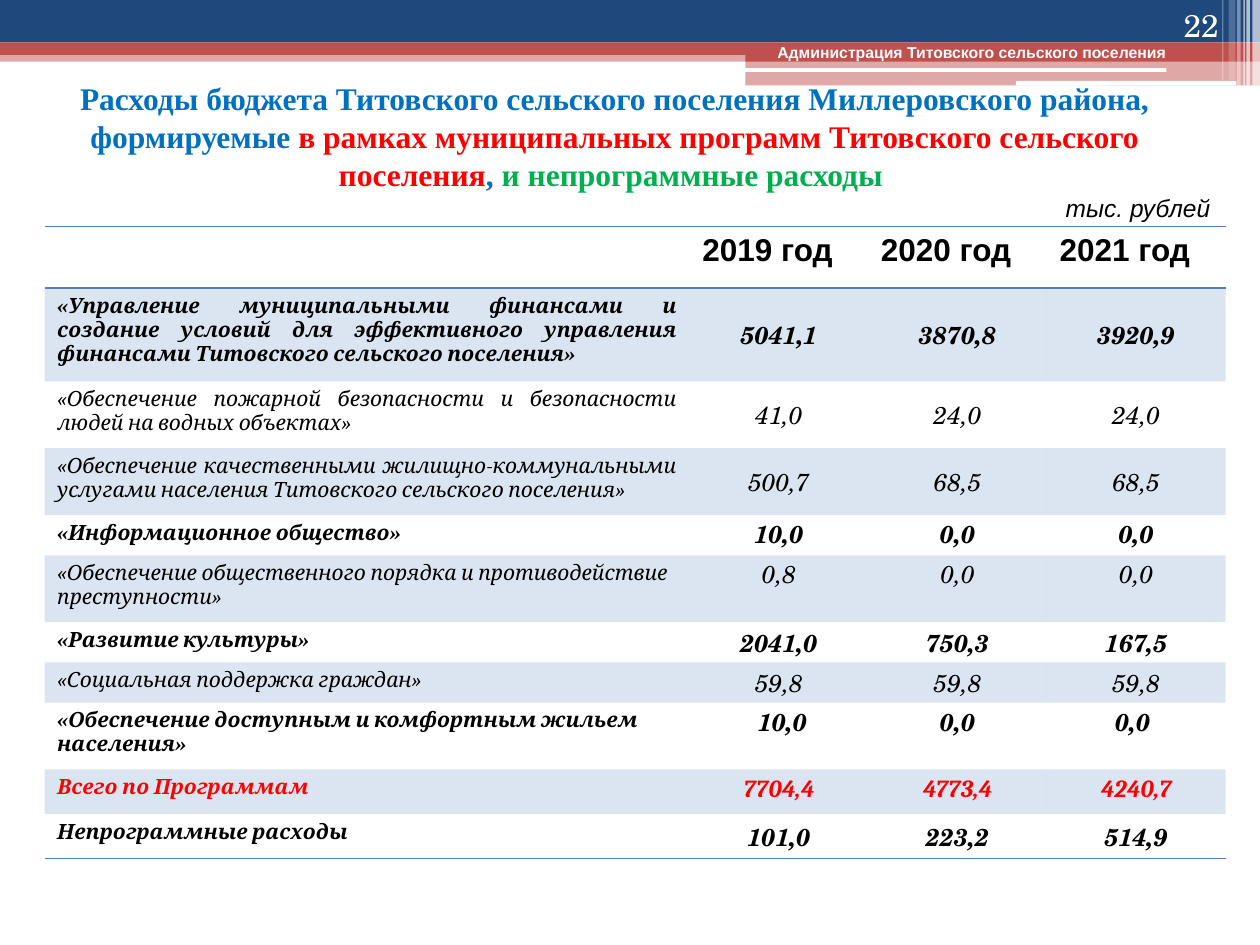
from lxml.etree import SubElement
from pptx import Presentation
from pptx.dml.color import RGBColor
from pptx.enum.shapes import MSO_SHAPE
from pptx.enum.text import MSO_ANCHOR, PP_ALIGN
from pptx.oxml import parse_xml
from pptx.oxml.ns import nsdecls, qn
from pptx.util import Pt

NAVY = RGBColor(0x1F, 0x49, 0x7D)
BRICK = RGBColor(0xC0, 0x50, 0x4D)
STEEL = RGBColor(0x4F, 0x81, 0xBD)
WHITE = RGBColor(0xFF, 0xFF, 0xFF)
BLACK = RGBColor(0, 0, 0)
BLUE = RGBColor(0x00, 0x70, 0xC0)
RED = RGBColor(0xFF, 0, 0)
GREEN = RGBColor(0x00, 0xB0, 0x50)
NO_STYLE = "{2D5ABB26-0587-4C30-8999-92F81FD0307C}"

# left, top, width, height, colour, opacity in percent
BANDS = [
    (0, 28.8, 720, 6.5, BRICK, 50),
    (0, 0, 720, 24.2, NAVY, 100),
    (0, 24.2, 720, 7.2, BRICK, 100),
    (426, 28, 294, 7.2, BRICK, 100),
    (426, 35.2, 294, 13.6, BRICK, 50),
]
PILLS = [(425.5, 38.9, 241, 2.2, WHITE, 100), (580.5, 46.3, 126, 2.6, WHITE, 100)]
# left, width, height, opacity of the stripes at the right edge
STRIPES = [
    (715.6, 4.4, 49, 65), (712.2, 2, 49, 65), (710.6, 0.8, 49, 60),
    (707, 2, 49, 40), (702, 4, 46, 20), (698.4, 0.8, 46, 30),
]
TITLE = [
    ("Расходы бюджета Титовского сельского поселения Миллеровского района, "
     "формируемые ", BLUE),
    ("в рамках муниципальных программ Титовского сельского поселения", RED),
    (", ", BLUE),
    ("и непрограммные расходы ", GREEN),
]
COLUMN_WIDTHS = [368.6, 102.1, 102.1, 102.1]
HEADER_HEIGHT = 35
YEARS = ["2019 год", "2020 год", "2021 год"]

TOP, MIDDLE = MSO_ANCHOR.TOP, MSO_ANCHOR.MIDDLE
LEFT, JUSTIFY = PP_ALIGN.LEFT, PP_ALIGN.JUSTIFY
PLAIN = dict(bold=False, color=BLACK, values_font="TeX Gyre Schola", margin=5)
BOLD = {**PLAIN, "bold": True}
TOTAL = dict(bold=True, color=RED, values_font="Cambria", margin=None)
# programme, values by year, height, name alignment, value anchor, look
EXPENSES = [
    ("«Управление муниципальными финансами и создание условий для эффективного "
     "управления финансами Титовского сельского поселения»",
     ["5041,1", "3870,8", "3920,9"], 53.5, JUSTIFY, MIDDLE, BOLD),
    ("«Обеспечение пожарной безопасности и безопасности людей на водных объектах»",
     ["41,0", "24,0", "24,0"], 38.2, JUSTIFY, MIDDLE, PLAIN),
    ("«Обеспечение качественными жилищно-коммунальными услугами населения "
     "Титовского сельского поселения»",
     ["500,7", "68,5", "68,5"], 38.2, JUSTIFY, MIDDLE, PLAIN),
    ("«Информационное общество»", ["10,0", "0,0", "0,0"], 23, LEFT, TOP, BOLD),
    ("«Обеспечение общественного порядка и противодействие преступности»",
     ["0,8", "0,0", "0,0"], 38.2, LEFT, TOP, PLAIN),
    ("«Развитие культуры»", ["2041,0", "750,3", "167,5"], 23, LEFT, MIDDLE, BOLD),
    ("«Социальная поддержка граждан»",
     ["59,8", "59,8", "59,8"], 23, LEFT, MIDDLE, PLAIN),
    ("«Обеспечение доступным и комфортным жильем населения»",
     [" 10,0", "0,0", "0,0 "], 38.2, LEFT, TOP, BOLD),
    ("Всего по Программам",
     ["7704,4", "4773,4", "4240,7"], 25.5, LEFT, TOP, TOTAL),
    ("Непрограммные расходы",
     ["101,0", "223,2", "514,9"], 25.5, LEFT, MIDDLE, BOLD),
]


def set_fill(fill, color, opacity=100):
    fill.solid()
    fill.fore_color.rgb = color
    if opacity < 100:
        srgb = fill._xPr.find(f"{qn('a:solidFill')}/{qn('a:srgbClr')}")
        SubElement(srgb, qn("a:alpha"), val=str(opacity * 1000))


def add_band(slide, left, top, width, height, color, opacity,
             preset=MSO_SHAPE.RECTANGLE):
    band = slide.shapes.add_shape(preset, Pt(left), Pt(top), Pt(width), Pt(height))
    band.shadow.inherit = False
    band.line.fill.background()
    set_fill(band.fill, color, opacity)


def write(paragraph, text, color, **font_format):
    run = paragraph.add_run()
    run.text = text
    run.font.color.rgb = color
    for name, value in font_format.items():
        setattr(run.font, name, value)


def add_text(slide, left, top, width, height, runs, align=LEFT, anchor=TOP,
             **font_format):
    box = slide.shapes.add_textbox(Pt(left), Pt(top), Pt(width), Pt(height))
    frame = box.text_frame
    frame.word_wrap = True
    frame.vertical_anchor = anchor
    paragraph = frame.paragraphs[0]
    paragraph.alignment = align
    for text, color in runs:
        write(paragraph, text, color, **font_format)


def add_borders(cell, *sides):
    properties = cell._tc.get_or_add_tcPr()
    for position, side in enumerate(sides):
        properties.insert(position, parse_xml(
            f'<a:{side} {nsdecls("a")} w="{Pt(1)}"><a:solidFill>'
            f'<a:srgbClr val="{STEEL}"/></a:solidFill></a:{side}>'))


def fill_expense_row(cells, expense, shaded):
    programme, values, _, align, anchor, look = expense
    for column, (cell, text) in enumerate(zip(cells, [programme, *values])):
        if shaded:
            set_fill(cell.fill, STEEL, 20)
        else:
            cell.fill.background()
        paragraph = cell.text_frame.paragraphs[0]
        paragraph.alignment = PP_ALIGN.CENTER if column else align
        if column:
            cell.vertical_anchor = anchor
            if look["margin"] is not None:
                side = Pt(look["margin"])
                margins = dict(margin_left=side, margin_right=side,
                               margin_top=0, margin_bottom=0)
                for name, value in margins.items():
                    setattr(cell, name, value)
        write(paragraph, text, look["color"], size=Pt(14 if column else 12),
              name=look["values_font"] if column else "Cambria",
              bold=look["bold"], italic=True)


def add_expense_table(slide):
    heights = [HEADER_HEIGHT] + [expense[2] for expense in EXPENSES]
    table = slide.shapes.add_table(
        len(heights), len(COLUMN_WIDTHS), Pt(25.5), Pt(129.5),
        Pt(sum(COLUMN_WIDTHS)), Pt(sum(heights))).table
    table._tbl.tblPr.find(qn("a:tableStyleId")).text = NO_STYLE
    for column, width in zip(table.columns, COLUMN_WIDTHS):
        column.width = Pt(width)
    for row, height in zip(table.rows, heights):
        row.height = Pt(height)

    # Header
    header, *expense_rows = [list(row.cells) for row in table.rows]
    for cell, year in zip(header[1:], YEARS):
        write(cell.text_frame.paragraphs[0], year, BLACK,
              size=Pt(18), name="Arial", bold=True)
    for cell in header:
        cell.fill.background()
        add_borders(cell, "lnT", "lnB")

    # Programmes and totals
    for index, (cells, expense) in enumerate(zip(expense_rows, EXPENSES)):
        fill_expense_row(cells, expense, shaded=index % 2 == 0)
    for cell in expense_rows[-1]:
        add_borders(cell, "lnB")


def main():
    presentation = Presentation()
    presentation.slide_width, presentation.slide_height = Pt(720), Pt(540)
    slide = presentation.slides.add_slide(presentation.slide_layouts[6])

    # Top banner
    for band in BANDS:
        add_band(slide, *band)
    for pill in PILLS:
        add_band(slide, *pill, preset=MSO_SHAPE.ROUNDED_RECTANGLE)
    for left, width, height, opacity in STRIPES:
        add_band(slide, left, 0, width, height, WHITE, opacity)

    # Title and page number
    add_text(slide, 0, 43.2, 702.7, 69.1, TITLE, PP_ALIGN.CENTER, MIDDLE,
             size=Pt(18), name="Times New Roman", bold=True)
    add_text(slide, 643.7, 0, 59.8, 28.8, [("22", WHITE)], PP_ALIGN.RIGHT,
             MSO_ANCHOR.BOTTOM, size=Pt(18), name="TeX Gyre Schola")

    add_expense_table(slide)

    # Unit and administration name
    add_text(slide, 601.9, 106.6, 102.2, 24.5, [("тыс. рублей", BLACK)],
             size=Pt(14), name="Arial", italic=True)
    add_text(slide, 410.4, 20.9, 289.4, 18,
             [("Администрация Титовского сельского поселения", WHITE)],
             PP_ALIGN.CENTER, size=Pt(9), name="Arial", bold=True)

    presentation.save("out.pptx")


if __name__ == "__main__":
    main()
